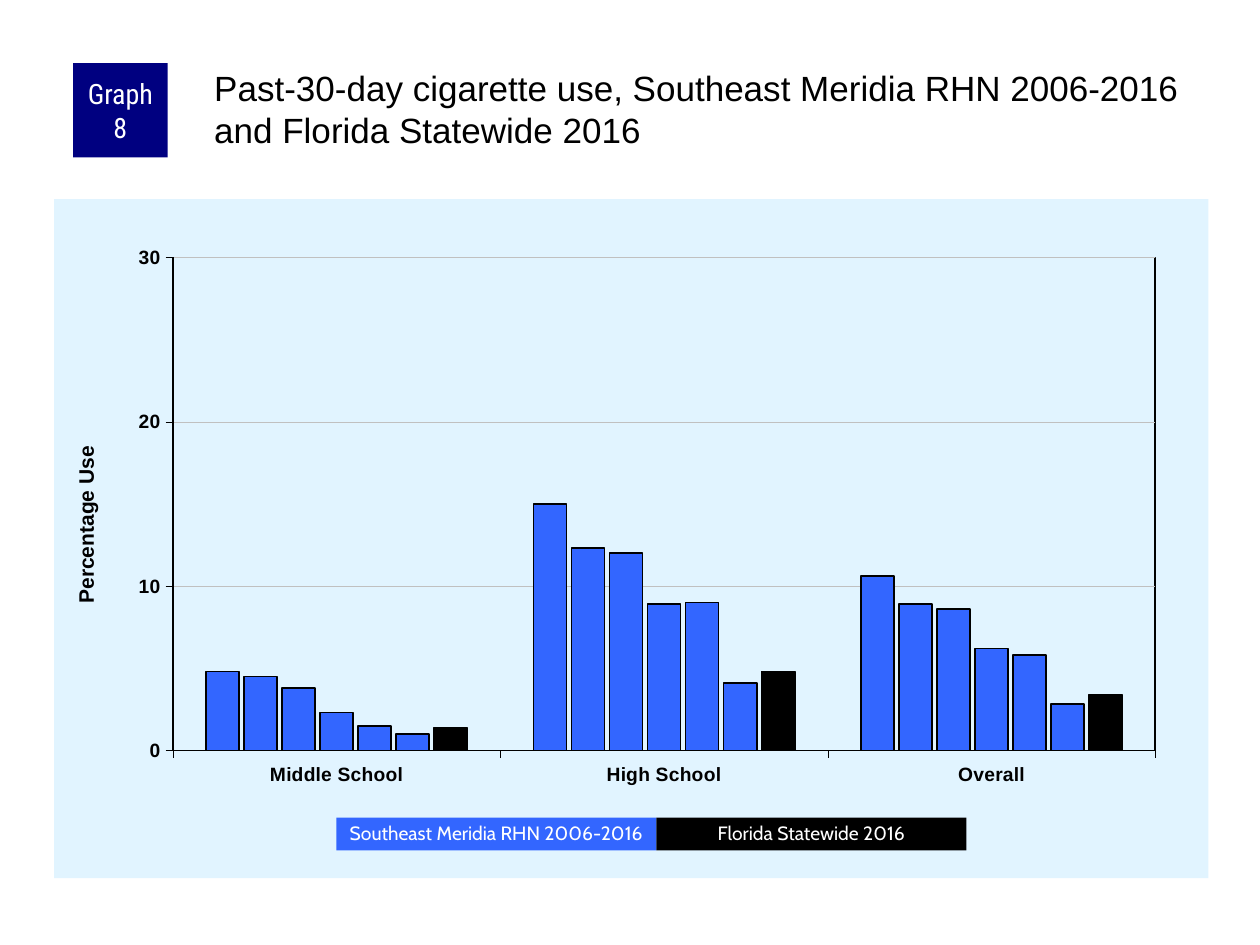
from pptx import Presentation
from pptx.chart.data import CategoryChartData
from pptx.dml.color import RGBColor
from pptx.enum.chart import XL_CHART_TYPE, XL_TICK_MARK
from pptx.enum.shapes import MSO_SHAPE
from pptx.enum.text import MSO_ANCHOR, PP_ALIGN
from pptx.oxml import parse_xml
from pptx.oxml.ns import nsdecls, qn
from pptx.util import Inches, Pt

BLACK = RGBColor(0, 0, 0)
WHITE = RGBColor(0xFF, 0xFF, 0xFF)
NAVY = RGBColor(0, 0, 0x80)
BLUE = RGBColor(0x33, 0x66, 0xFF)
PALE_BLUE = RGBColor(0xE1, 0xF4, 0xFF)
SILVER = RGBColor(0xC0, 0xC0, 0xC0)

REGION = "Southeast Meridia RHN 2006-2016"
STATE = "Florida Statewide 2016"
CATEGORIES = ["Middle School", "High School", "Overall"]
REGION_VALUES = [
    (4.8, 15, 10.6),
    (4.5, 12.3, 8.9),
    (3.8, 12, 8.6),
    (2.3, 8.9, 6.2),
    (1.5, 9, 5.8),
    (1, 4.1, 2.8),
]
STATE_VALUES = (1.4, 4.8, 3.4)


def style_font(font, name, size, color, bold=False):
    font.name = name
    font.size = Pt(size)
    font.color.rgb = color
    font.bold = bold


def style_line(line, color, width):
    line.color.rgb = color
    line.width = Pt(width)


def add_text(frame, text, name, size, color):
    para = frame.paragraphs[0]
    span = para.add_run()
    span.text = text
    style_font(span.font, name, size, color)
    return para


def add_label(page, text, left, top, width, height, fill, name, size):
    box = page.shapes.add_shape(
        MSO_SHAPE.RECTANGLE, Inches(left), Inches(top), Inches(width), Inches(height)
    )
    box.shadow.inherit = False
    box.fill.solid()
    box.fill.fore_color.rgb = fill
    box.line.fill.background()
    frame = box.text_frame
    frame.word_wrap = True
    frame.vertical_anchor = MSO_ANCHOR.MIDDLE
    frame.margin_left = frame.margin_right = Inches(0.05)
    frame.margin_top = frame.margin_bottom = 0
    para = add_text(frame, text, name, size, WHITE)
    para.alignment = PP_ALIGN.CENTER
    return para


def add_legend_label(page, text, left, width, fill):
    para = add_label(page, text, left, 6.49, width, 0.26, fill, "Cabin", 11)
    para.line_spacing = 0.9


def add_title(page, text):
    box = page.shapes.add_textbox(Inches(1.67), Inches(0.5), Inches(7.92), Inches(0.83))
    frame = box.text_frame
    frame.word_wrap = True
    frame.margin_left = frame.margin_top = Inches(0.03)
    frame.margin_right = frame.margin_bottom = 0
    add_text(frame, text, "Arial", 20, BLACK)


def make_layout(**places):
    target = '<c:layoutTarget val="inner"/>' if "w" in places else ""
    modes = "".join(f'<c:{key}Mode val="edge"/>' for key in "xy")
    values = "".join(f'<c:{key} val="{value}"/>' for key, value in places.items())
    return parse_xml(
        f'<c:layout {nsdecls("c")}><c:manualLayout>{target}{modes}{values}'
        "</c:manualLayout></c:layout>"
    )


def make_area_format(fill, line):
    return parse_xml(
        f'<c:spPr {nsdecls("c", "a")}>{fill}<a:ln w="12700">{line}</a:ln></c:spPr>'
    )


def solid_fill(color):
    return f'<a:solidFill><a:srgbClr val="{color}"/></a:solidFill>'


def style_axis(axis):
    axis.major_tick_mark = XL_TICK_MARK.OUTSIDE
    axis.minor_tick_mark = XL_TICK_MARK.NONE
    style_font(axis.tick_labels.font, "Arial", 11, BLACK, True)
    style_line(axis.format.line, BLACK, 0.25)


def style_value_axis(axis):
    style_axis(axis)
    axis.minimum_scale = 0
    axis.maximum_scale = 30
    axis.major_unit = 10
    style_line(axis.major_gridlines.format.line, SILVER, 0.25)
    title = axis.axis_title
    span = title.text_frame.paragraphs[0].add_run()
    span.text = "Percentage Use"
    style_font(span.font, "Arial", 12, BLACK, True)
    element = title._element
    for layout in element.findall(qn("c:layout")):
        element.remove(layout)
    element.find(qn("c:tx")).addnext(make_layout(x=0.013, y=0.358))


def style_areas(chart):
    root = chart._chartSpace
    root.chart.addnext(make_area_format(solid_fill(PALE_BLUE), "<a:noFill/>"))
    area = root.chart.plotArea
    for layout in area.findall(qn("c:layout")):
        area.remove(layout)
    area.insert(0, make_layout(x=0.103, y=0.086, w=0.851, h=0.726))
    area.append(make_area_format("<a:noFill/>", solid_fill(BLACK)))


def add_usage_chart(page):
    data = CategoryChartData()
    data.categories = CATEGORIES
    for number, values in enumerate([*REGION_VALUES, STATE_VALUES], 1):
        data.add_series(f"Series {number}", values)
    chart = page.shapes.add_chart(
        XL_CHART_TYPE.COLUMN_CLUSTERED,
        Inches(0.43), Inches(1.58), Inches(9.16), Inches(5.39), data,
    ).chart
    chart.has_legend = False
    chart.has_title = False
    style_font(chart.font, "Arial", 8, BLACK)
    plot = chart.plots[0]
    plot.vary_by_categories = False
    plot.gap_width = 200
    plot.overlap = -15
    for index, series in enumerate(plot.series):
        series.format.fill.solid()
        series.format.fill.fore_color.rgb = BLUE if index < len(REGION_VALUES) else BLACK
        style_line(series.format.line, BLACK, 1)
    style_axis(chart.category_axis)
    style_value_axis(chart.value_axis)
    style_areas(chart)


def main():
    deck = Presentation()
    deck.slide_width = Inches(10)
    deck.slide_height = Inches(7.5)
    page = deck.slides.add_slide(deck.slide_layouts[6])
    add_usage_chart(page)
    add_label(page, "Graph 8", 0.58, 0.5, 0.75, 0.75, NAVY, "Roboto Condensed", 16)
    add_title(page, f"Past-30-day cigarette use, {REGION} and {STATE}")
    add_legend_label(page, REGION, 2.67, 2.54, BLUE)
    add_legend_label(page, STATE, 5.21, 2.46, BLACK)
    deck.save("out.pptx")


if __name__ == "__main__":
    main()
